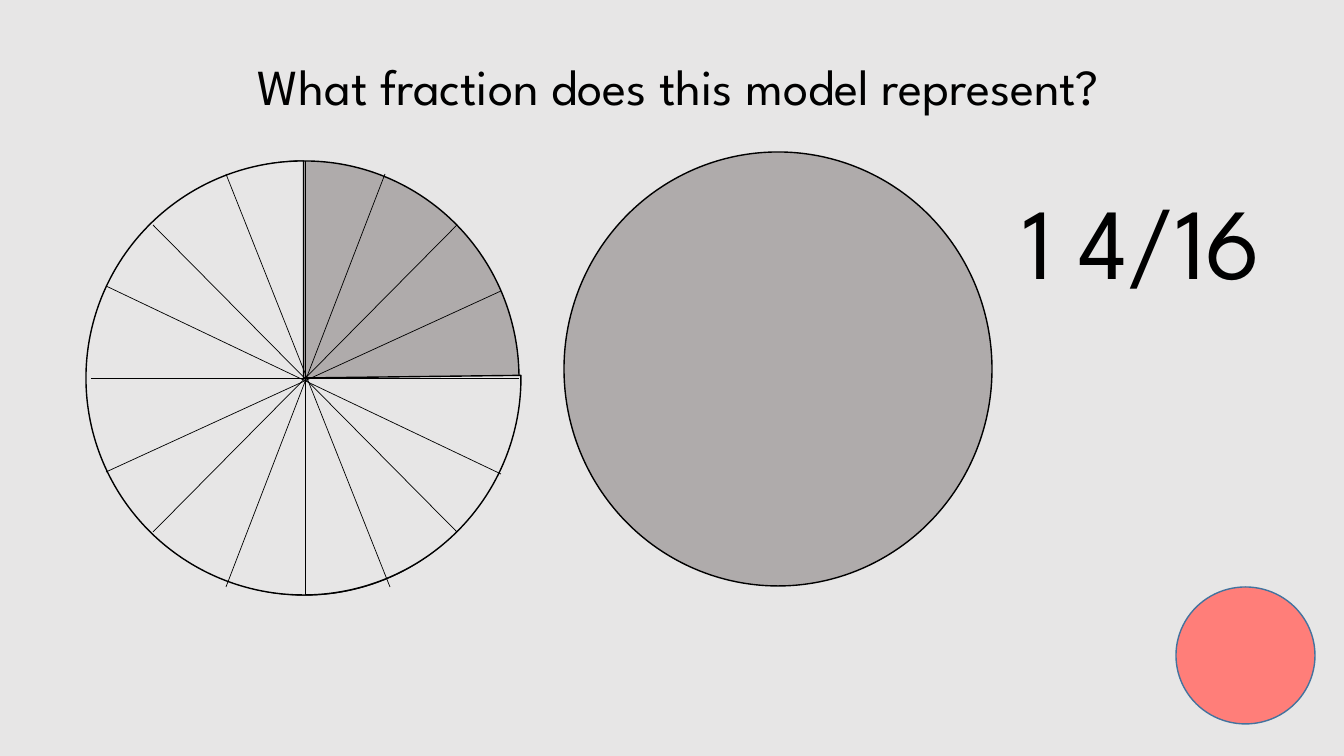
import pptx
import pptx.dml.color
import pptx.enum.shapes
import pptx.enum.text
import pptx.oxml.ns
import pptx.util

SHAPE = pptx.enum.shapes.MSO_SHAPE
ALIGN = pptx.enum.text.PP_ALIGN
EMU_PER_PX = 914400 / 100.8
SLIDE_SIZE = (1344, 756)

BLACK, GREY, PALE = "000000", "AFABAB", "E7E6E6"
CORAL, BLUE = "FF7E79", "43739E"
FONT = "League Spartan"

TITLE = {"text": "What fraction does this model represent? ",
         "box": (55, 50, 1260, 72), "size": 36, "align": ALIGN.CENTER}
ANSWER = {"text": "1 4/16", "box": (1013, 174, 331, 132), "size": 72, "align": ALIGN.LEFT}

# preset, box, fill, outline, adjustments (angles in 60000ths of a degree / 100000)
SHAPES = [
    (SHAPE.OVAL, (1176, 587, 139, 137), CORAL, BLUE, ()),
    (SHAPE.OVAL, (91, 161, 428, 434), GREY, BLACK, ()),
    (SHAPE.PIE, (86, 161, 435, 434), PALE, BLACK, (215.589, 162)),
    (SHAPE.OVAL, (564, 152, 428, 434), GREY, BLACK, ()),
]

# Eight diameters cut the left circle into sixteenths: x1, y1, x2, y2
DIAMETERS = [
    (305, 161, 305, 595), (91, 378, 519, 378),
    (153, 225, 457, 532), (457, 225, 153, 532),
    (226, 174, 390, 587), (385, 174, 226, 587),
    (106, 286, 501, 474), (106, 472, 501, 291),
]


def px(*lengths):
    return [pptx.util.Emu(round(length * EMU_PER_PX)) for length in lengths]


def color(hex_string):
    return pptx.dml.color.RGBColor.from_string(hex_string)


def set_values(target, values):
    for name, value in values.items():
        setattr(target, name, value)


def write_text(box, content):
    left, top, width, height = px(*content["box"])
    set_values(box, {"left": left, "top": top, "width": width, "height": height})
    set_values(box.text_frame, {
        "word_wrap": True,
        "auto_size": pptx.enum.text.MSO_AUTO_SIZE.NONE,
        "vertical_anchor": pptx.enum.text.MSO_ANCHOR.TOP,
    })
    para = box.text_frame.paragraphs[0]
    para.alignment = content["align"]
    span = para.add_run()
    span.text = content["text"]
    set_values(span.font, {"name": FONT, "size": pptx.util.Pt(content["size"])})
    span.font.color.rgb = color(BLACK)


def set_line(line, hex_string, points):
    line.color.rgb = color(hex_string)
    line.width = pptx.util.Pt(points)


def add_figure(page, preset, box, fill, outline, adjustments):
    figure = page.shapes.add_shape(preset, *px(*box))
    figure.shadow.inherit = False
    for index, value in enumerate(adjustments):
        figure.adjustments[index] = value
    figure.fill.solid()
    figure.fill.fore_color.rgb = color(fill)
    set_line(figure.line, outline, 1)


def add_diameter(page, ends):
    diameter = page.shapes.add_connector(
        pptx.enum.shapes.MSO_CONNECTOR.STRAIGHT, *px(*ends))
    set_line(diameter.line, BLACK, 0.5)
    properties = diameter._element.spPr
    properties.append(properties.makeelement(pptx.oxml.ns.qn("a:effectLst"), {}))


def main():
    deck = pptx.Presentation()
    deck.slide_width, deck.slide_height = px(*SLIDE_SIZE)
    page = deck.slides.add_slide(deck.slide_layouts.get_by_name("Title Only"))
    page.background.fill.solid()
    page.background.fill.fore_color.rgb = color(PALE)

    write_text(page.shapes.title, TITLE)
    write_text(page.shapes.add_textbox(*px(*ANSWER["box"])), ANSWER)
    for figure in SHAPES:
        add_figure(page, *figure)
    for ends in DIAMETERS:
        add_diameter(page, ends)
    deck.save("out.pptx")


if __name__ == "__main__":
    main()
